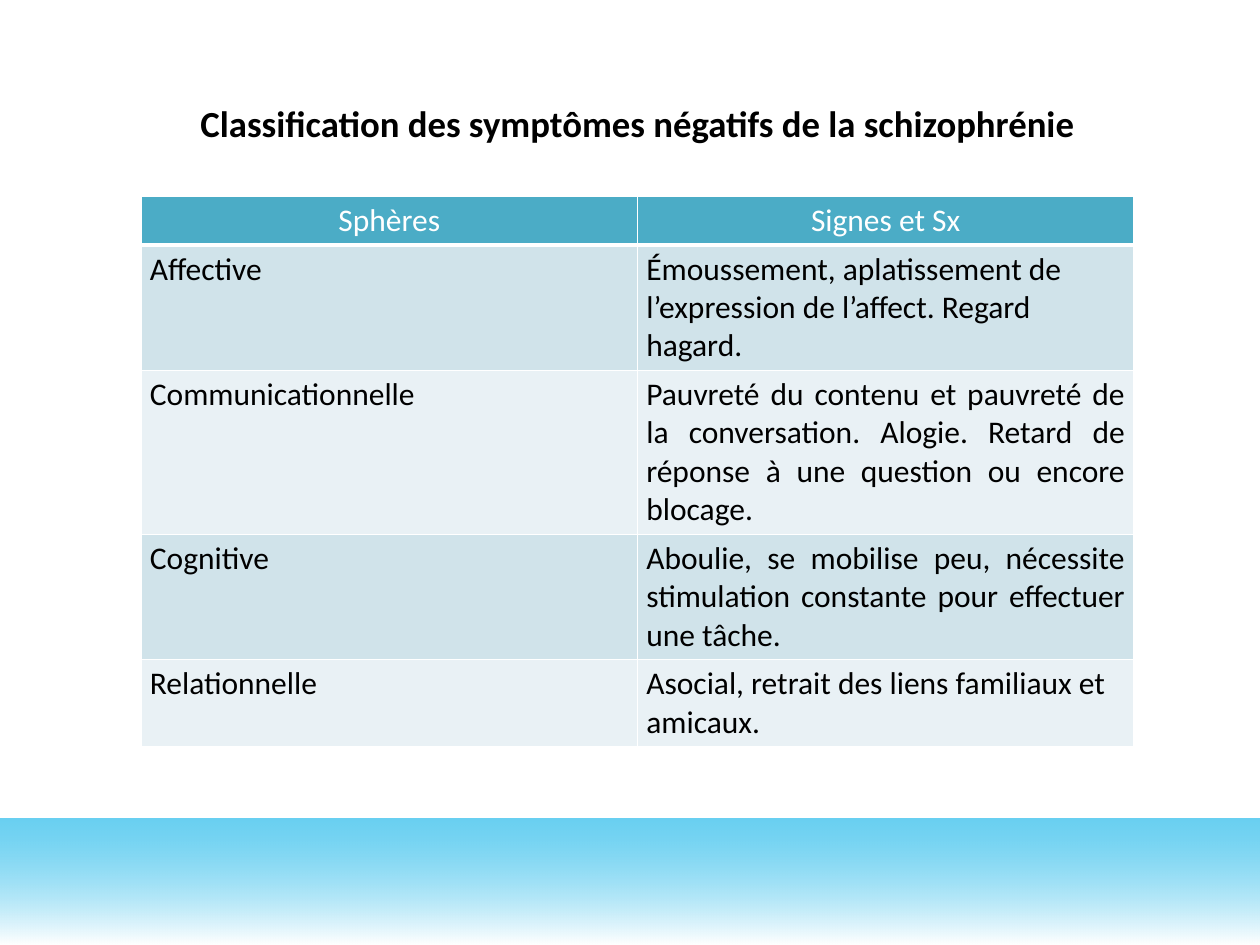
"""Builds a slide classifying the negative symptoms of schizophrenia."""
import pptx
import pptx.dml.color
import pptx.enum.shapes
import pptx.enum.text
import pptx.oxml
import pptx.oxml.ns
import pptx.util
import lxml.etree

Inches, Pt = pptx.util.Inches, pptx.util.Pt
Align = pptx.enum.text.PP_ALIGN
Anchor = pptx.enum.text.MSO_ANCHOR
COLOURS = {"text": "000000", "header": "4BACC6", "odd": "D0E3EA",
           "even": "E9F1F5", "white": "FFFFFF", "band": "13B5EA"}


def colour(name):
    return pptx.dml.color.RGBColor.from_string(COLOURS[name])


def add_border(cell, side, points):
    cell._tc.get_or_add_tcPr().append(pptx.oxml.parse_xml(
        f'<a:ln{side} {pptx.oxml.ns.nsdecls("a")} w="{Pt(points)}"><a:solidFill>'
        f'<a:srgbClr val="{COLOURS["white"]}"/></a:solidFill></a:ln{side}>'))


deck = pptx.Presentation()
deck.slide_width, deck.slide_height = Inches(10), Inches(7.5)
slide = deck.slides.add_slide(deck.slide_layouts[5])
left, width = Inches(1.12), Inches(7.88)

band = slide.shapes.add_shape(pptx.enum.shapes.MSO_SHAPE.RECTANGLE,
                              0, Inches(6.5), deck.slide_width, Inches(1))
band.shadow.inherit = False
band.line.fill.background()
band.fill.gradient()
band.fill.gradient_angle = 270
for stop, name, position in zip(band.fill.gradient_stops, ("band", "white"), (0, 1)):
    stop.color.rgb = colour(name)
    stop.position = position
band_colour = band._element.spPr.find(".//" + pptx.oxml.ns.qn("a:srgbClr"))
lxml.etree.SubElement(band_colour, pptx.oxml.ns.qn("a:alpha"), val="63000")

title = slide.shapes.title
title.left, title.top, title.width, title.height = left, Inches(0.75), width, Inches(1.62)
title.text_frame.text = "Classification des symptômes négatifs de la schizophrénie"
title.text_frame.vertical_anchor = Anchor.TOP
heading = title.text_frame.paragraphs[0]
heading.alignment = Align.CENTER
heading.font.name, heading.font.size, heading.font.bold = "Calibri", Pt(21), True
heading.font.color.rgb = colour("text")

rows = [
    ("Sphères", "Signes et Sx", Align.CENTER, 0.3),
    ("Affective", "Émoussement, aplatissement de l’expression de l’affect. Regard hagard.",
     Align.LEFT, 0.53),
    ("Communicationnelle", "Pauvreté du contenu et pauvreté de la conversation. Alogie. "
     "Retard de réponse à une question ou encore blocage.", Align.JUSTIFY, 0.75),
    ("Cognitive", "Aboulie, se mobilise peu, nécessite stimulation constante pour "
     "effectuer une tâche.", Align.JUSTIFY, 0.53),
    ("Relationnelle", "Asocial, retrait des liens familiaux et amicaux.", Align.LEFT, 0.3),
]
table_frame = slide.shapes.add_table(len(rows), 2, left, Inches(1.56), width, Inches(4.28))
symptoms = table_frame.table
for r, (sphere, signs, signs_alignment, height) in enumerate(rows):
    symptoms.rows[r].height = Inches(height)
    header = r == 0
    fill = "header" if header else "odd" if r % 2 else "even"
    sphere_alignment = Align.CENTER if header else Align.LEFT
    for c, (text, alignment) in enumerate([(sphere, sphere_alignment),
                                           (signs, signs_alignment)]):
        cell = symptoms.cell(r, c)
        for side in "LRTB":
            add_border(cell, side, 3 if header and side == "B" else 1)
        cell.fill.solid()
        cell.fill.fore_color.rgb = colour(fill)
        cell.margin_left = cell.margin_right = Inches(0.07)
        cell.margin_top = cell.margin_bottom = Inches(0.04)
        cell.text = text
        entry = cell.text_frame.paragraphs[0]
        entry.alignment = alignment
        entry.font.name, entry.font.size, entry.font.bold = "Calibri", Pt(18), False
        entry.font.color.rgb = colour("white" if header else "text")
table_frame.height = Inches(4.28)

deck.save("out.pptx")
